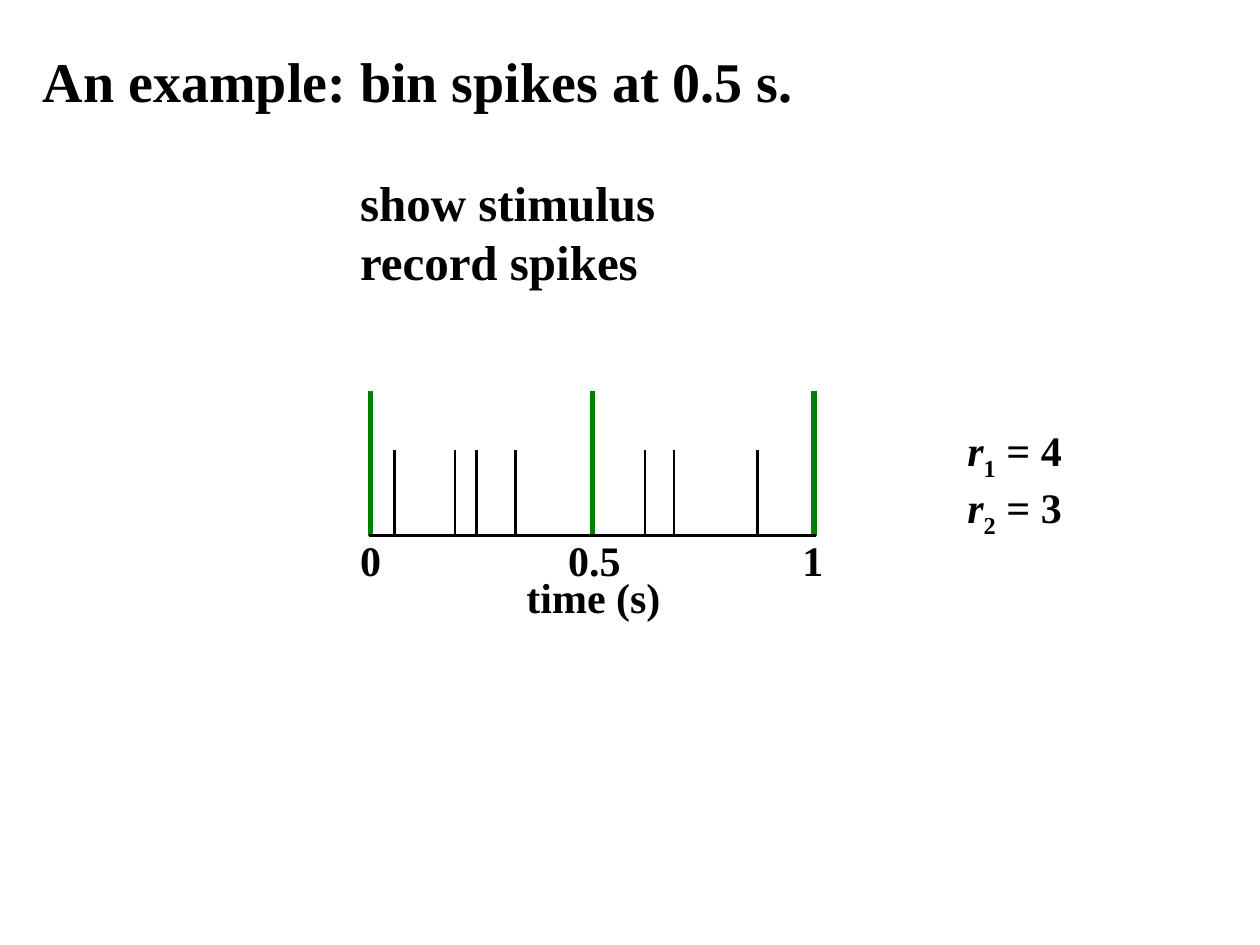
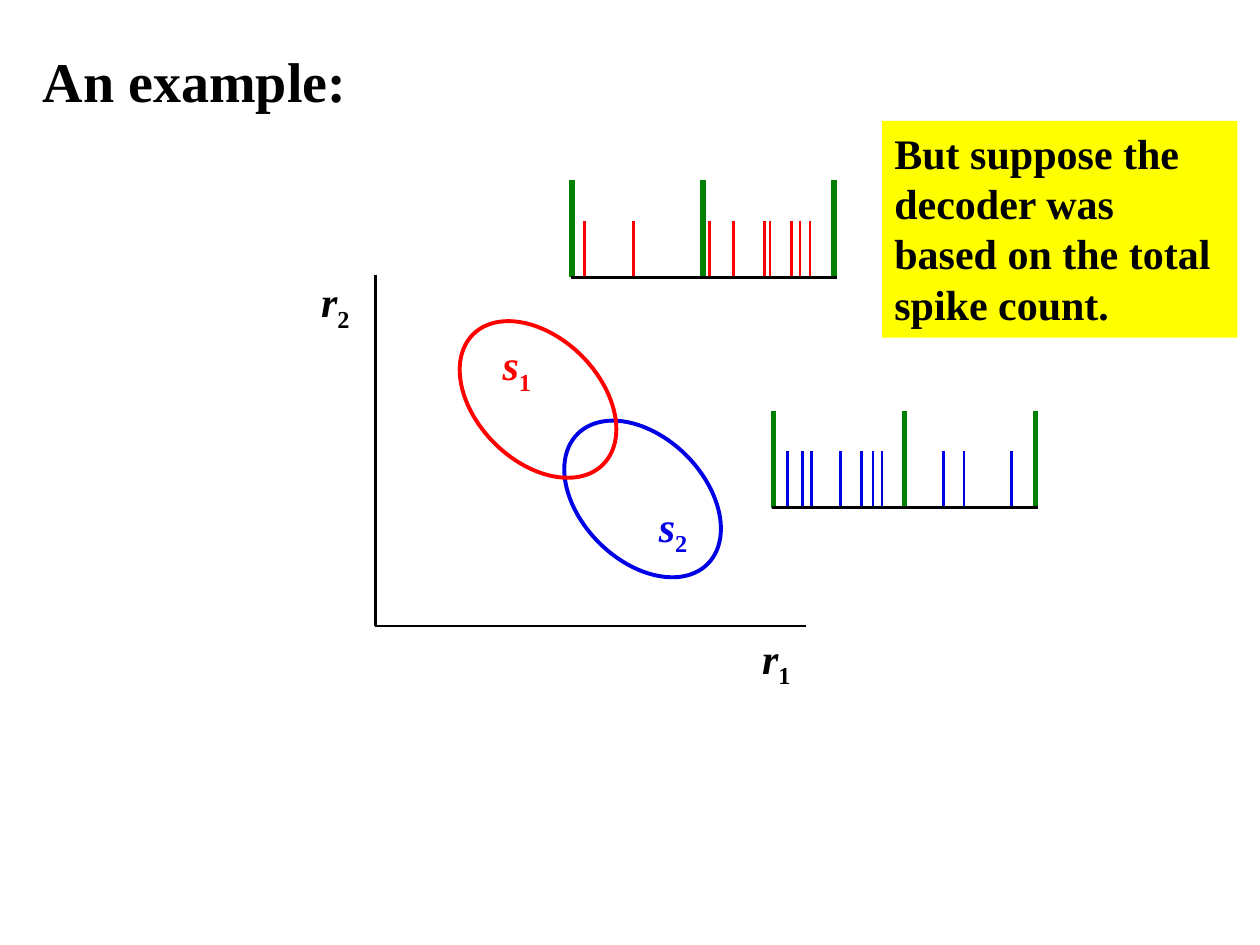
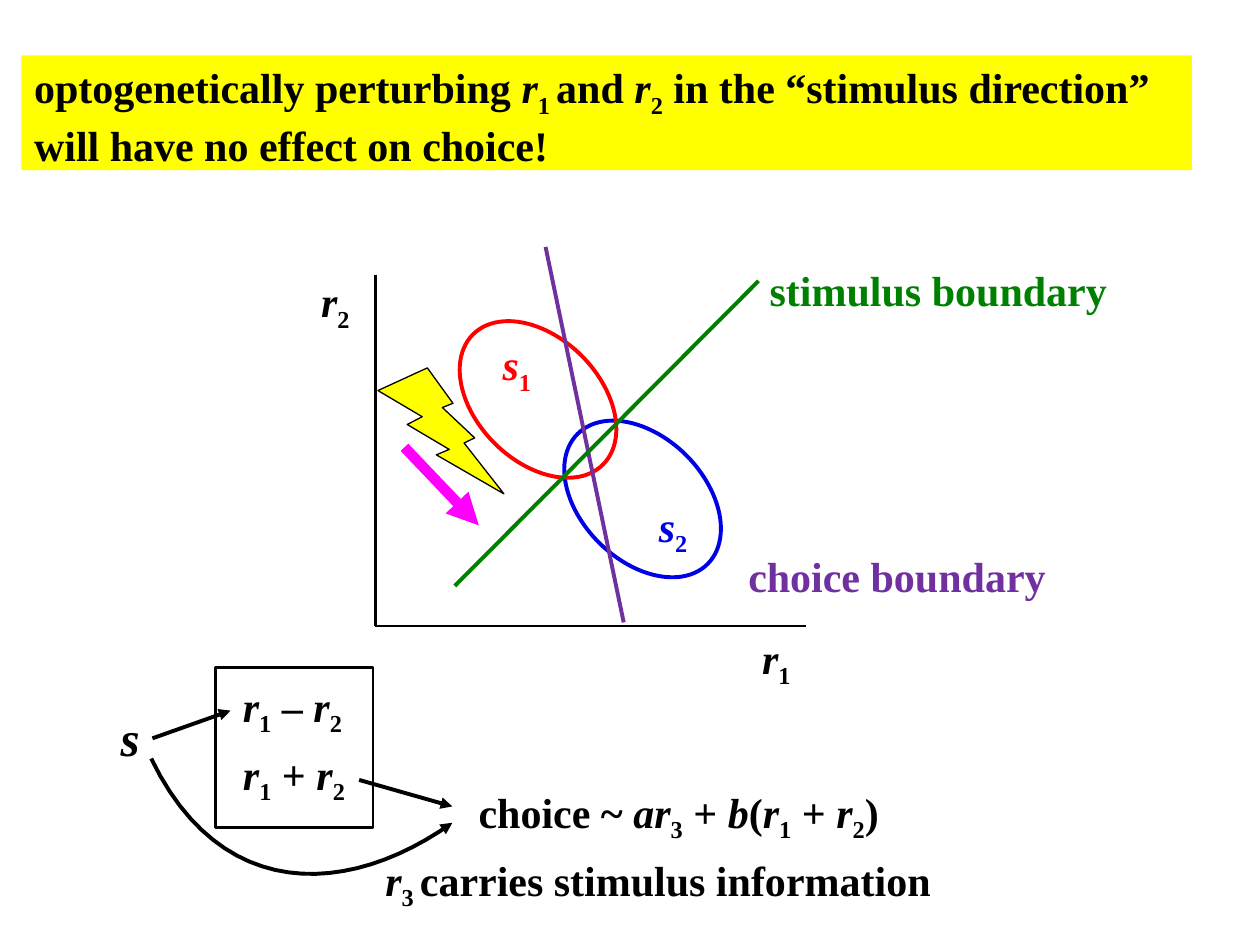
from lxml.etree import SubElement
from pptx import Presentation
from pptx.dml.color import RGBColor as Rgb
from pptx.enum.shapes import MSO_CONNECTOR as Conn, MSO_SHAPE as Kind
from pptx.enum.text import MSO_ANCHOR as Anchor, MSO_AUTO_SIZE as Fit, PP_ALIGN as Align
from pptx.oxml.ns import qn
from pptx.util import Pt

PX = 9144  # 100 px to the inch
FONT = "Times New Roman"
COLORS = {
    "ink": "000000",
    "bin": "008000",
    "red": "FF0000",
    "blue": "0000E6",
    "choice": "7030A0",
    "push": "FF00FF",
    "note": "FFFF00",
}


def color(name):
    return Rgb.from_string(COLORS[name])


def emu(*lengths):
    return [length * PX for length in lengths]


class Deck:
    def __init__(self):
        self.prs = Presentation()
        self.prs.slide_width, self.prs.slide_height = emu(1000, 750)

    def page(self):
        self.slide = self.prs.slides.add_slide(self.prs.slide_layouts[5])
        self.shapes = self.slide.shapes

    def put(self, shape, text, size, ink="ink", wrap=True, fit=Fit.NONE):
        """Fill a shape with text; runs are split by |, / marks italics, _ a subscript."""
        frame = shape.text_frame
        frame.word_wrap, frame.auto_size = wrap, fit
        frame.vertical_anchor = Anchor.TOP
        for i, row in enumerate(text.split("\n")):
            para = frame.add_paragraph() if i else frame.paragraphs[0]
            para.alignment = Align.LEFT
            font = para.font
            font.name, font.size, font.bold = FONT, Pt(size), True
            font.color.rgb = color(ink)
            for part in row.split("|"):
                run = para.add_run()
                run.text = part.lstrip("/_")
                if part.startswith("/"):
                    run.font.italic = True
                elif part.startswith("_"):
                    run.font._element.set("baseline", "-25000")

    def paint(self, shape, fill=None):
        if fill:
            shape.fill.solid()
            shape.fill.fore_color.rgb = color(fill)
        else:
            shape.fill.background()

    def title(self, text, box=(24, 32, 958, 64), size=32, fill=None):
        shape = self.shapes.title
        shape.left, shape.top, shape.width, shape.height = emu(*box)
        self.paint(shape, fill)
        self.put(shape, text, size)

    def label(self, text, x, y, w, h=50, size=24, ink="ink"):
        shape = self.shapes.add_textbox(*emu(x, y, w, h))
        self.put(shape, text, size, ink, False, Fit.SHAPE_TO_FIT_TEXT)

    def note(self, text, box):
        shape = self.shapes.add_textbox(*emu(*box))
        self.paint(shape, "note")
        self.put(shape, text, 24)

    def stroke(self, shape, ink, width, arrow=False):
        shape.line.color.rgb = color(ink)
        shape.line.width = Pt(width)
        if arrow:
            SubElement(shape.line._ln, qn("a:tailEnd"), type="triangle")

    def line(self, start, end, ink="ink", width=1.5, arrow=False):
        shape = self.shapes.add_connector(Conn.STRAIGHT, *emu(*start, *end))
        self.stroke(shape, ink, width, arrow)
        SubElement(shape._element.spPr, qn("a:effectLst"))

    def shape(self, kind, box, ink="ink", width=1.5, fill=None, turn=0):
        shape = self.shapes.add_shape(kind, *emu(*box))
        shape.shadow.inherit = False
        shape.rotation = turn
        self.paint(shape, fill)
        self.stroke(shape, ink, width)

    def curve(self, a, b, c, d, steps=24):
        """Draw an arrow along the cubic curve from a to d."""
        points = []
        for i in range(steps + 1):
            t = i / steps
            u = 1 - t
            points.append(tuple(
                round(PX * (u**3 * p + 3 * u * u * t * q + 3 * u * t * t * r + t**3 * s))
                for p, q, r, s in zip(a, b, c, d)))
        outline = self.shapes.build_freeform(*points[0])
        outline.add_line_segments(points[1:], close=False)
        shape = outline.convert_to_shape()
        shape.shadow.inherit = False
        self.paint(shape)
        self.stroke(shape, "ink", 2.25, True)

    def train(self, left, top, gap, tall, spikes, ink="ink"):
        """Draw a spike train over two time bins."""
        base = top + tall
        for x in spikes:
            self.line((x, base - round(tall * 0.59)), (x, base), ink)
        for i in range(3):
            x = left + i * gap
            self.line((x, top), (x, base), "bin", 3)
        self.line((left - 1, base), (left + 2 * gap + 2, base))

    def plane(self):
        """Draw the response plane with its two stimulus clouds."""
        self.line((298, 218), (298, 497))
        self.line((298, 497), (640, 497))
        for x, y, ink in (461, 323, "blue"), (378, 244, "red"):
            self.shape(Kind.OVAL, (x, y, 98, 146), ink, 2.25, turn=135)
        for text, x, y, ink in (
            ("/s|_1", 389, 264, "red"),
            ("/s|_2", 513, 392, "blue"),
            ("/r|_1", 595, 497, "ink"),
            ("/r|_2", 245, 214, "ink"),
        ):
            self.label(text, x, y, 45, ink=ink)


def bins(deck):
    deck.page()
    deck.title("An example: bin spikes at 0.5 s.")
    deck.label("show stimulus\nrecord spikes", 276, 132, 257, 104, 28)
    deck.train(294, 310, 176, 115, (313, 361, 378, 409, 512, 535, 601))
    for text, x, w in ("0", 276, 37), ("0.5", 441, 62), ("1", 627, 37):
        deck.label(text, x, 419, w)
    deck.label("time (s)", 408, 449, 127)
    deck.label("/r|_1| = 4\n/r|_2| = 3", 758, 332, 97, 91)


def count(deck):
    deck.page()
    deck.title("An example:")
    deck.plane()
    deck.train(454, 143, 104, 77,
               (464, 503, 563, 582, 607, 611, 628, 635, 643), "red")
    deck.train(614, 326, 104, 77,
               (625, 637, 644, 667, 684, 693, 700, 749, 765, 803), "blue")
    deck.note("But suppose the decoder was based on the total spike count.",
              (700, 96, 282, 172))


def choice(deck):
    deck.page()
    deck.title("optogenetically perturbing |/r|_1 |and |/r|_2| in the “stimulus direction” "
               "will have no effect on choice!", (17, 44, 929, 91), 24, "note")
    deck.plane()
    deck.line((433, 196), (495, 494), "choice", 2.25)
    deck.label("choice boundary", 584, 432, 259, ink="choice")
    deck.line((602, 223), (361, 465), "bin", 2.25)
    deck.label("stimulus boundary", 601, 205, 291, ink="bin")
    deck.shape(Kind.LIGHTNING_BOLT, (300, 292, 100, 100), width=0.75, fill="note")
    deck.line((321, 355), (380, 417), "push", 6, True)

    deck.label("/s", 86, 557, 35, 57, 28)
    deck.shape(Kind.RECTANGLE, (171, 530, 125, 127))
    deck.label("/r|_1| – |/r|_2", 183, 535, 103)
    deck.label("/r|_1| + |/r|_2", 183, 589, 105)
    deck.line((121, 586), (183, 564), width=2.25, arrow=True)
    deck.line((285, 619), (359, 640), width=2.25, arrow=True)
    deck.curve((120, 602), (175, 716), (276, 712), (359, 653))
    deck.label("choice ~ |/ar|_3| + |/b|(|/r|_1| + |/r|_2|)", 370, 619, 375)
    deck.label("/r|_3 |carries stimulus information", 296, 673, 462)


def main():
    deck = Deck()
    for build in bins, count, choice:
        build(deck)
    deck.prs.save("out.pptx")


if __name__ == "__main__":
    main()
